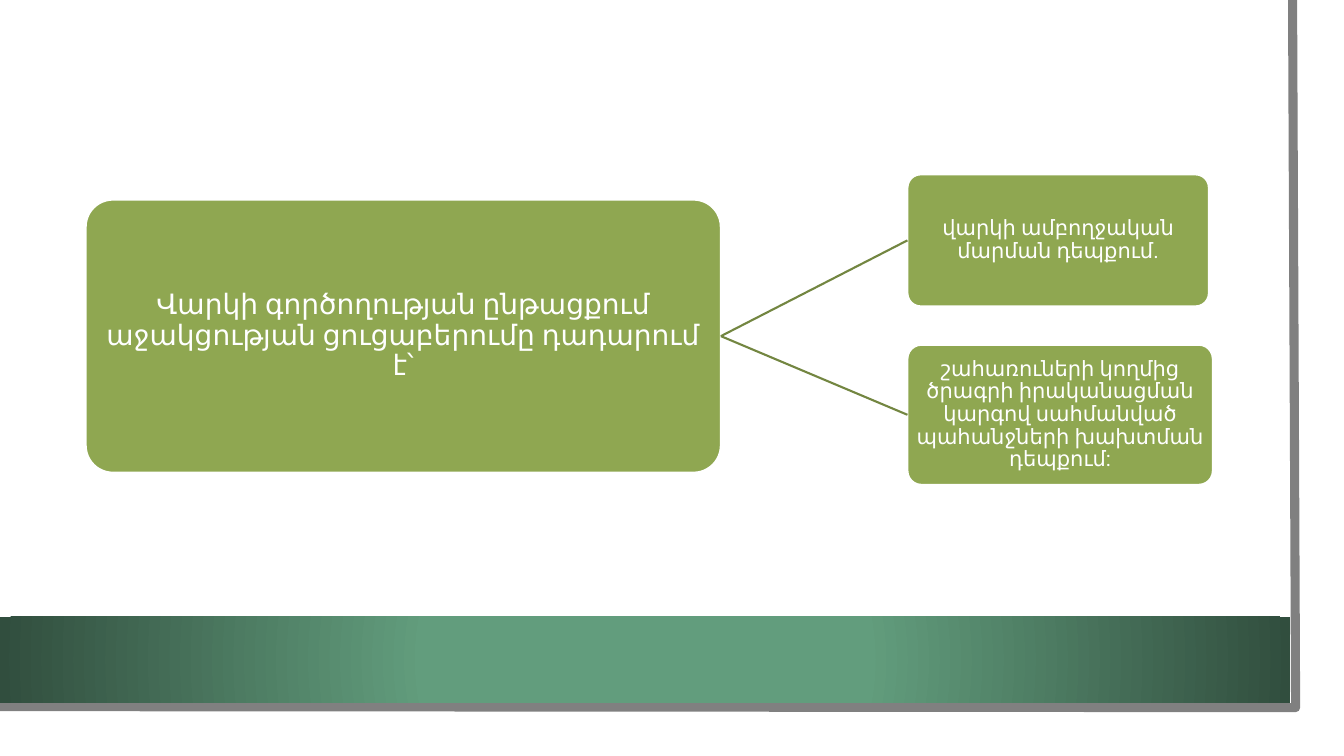
from lxml import etree
from pptx import Presentation
from pptx.dml.color import RGBColor
from pptx.enum.shapes import MSO_CONNECTOR, MSO_SHAPE
from pptx.enum.text import MSO_ANCHOR, PP_ALIGN
from pptx.oxml.ns import qn
from pptx.util import Inches, Pt

WHITE = RGBColor(0xFF, 0xFF, 0xFF)
GRAY = RGBColor(0x80, 0x80, 0x80)
OLIVE = RGBColor(0x8F, 0xA7, 0x51)
DARK_OLIVE = RGBColor(0x73, 0x86, 0x41)
GREEN = RGBColor(0x62, 0x9D, 0x7D)
DARK_GREEN = RGBColor(0x31, 0x4E, 0x3E)

RIGHT_SIDE, LEFT_SIDE = 3, 1


def set_all(target, values):
    for name, value in values.items():
        setattr(target, name, value)


class SlideBuilder:
    FONT = {"name": "Roboto"}
    FRAME = {"word_wrap": True, "vertical_anchor": MSO_ANCHOR.MIDDLE,
             **{f"margin_{side}": Inches(0.01)
                for side in ("left", "top", "right", "bottom")}}
    PARAGRAPH = {"alignment": PP_ALIGN.CENTER, "line_spacing": 0.9}

    def __init__(self, slide):
        self.shapes = slide.shapes

    def shape(self, kind, bounds):
        shape = self.shapes.add_shape(kind, *map(Inches, bounds))
        shape.shadow.inherit = False
        shape.line.fill.background()
        return shape

    def panel(self, bounds, color):
        panel = self.shape(MSO_SHAPE.RECTANGLE, bounds)
        panel.fill.solid()
        panel.fill.fore_color.rgb = color

    def radial_band(self, bounds, stops):
        """Add a rectangle whose gradient runs outward from its centre."""
        fill = self.shape(MSO_SHAPE.RECTANGLE, bounds).fill
        fill.gradient()
        for stop, (position, color) in zip(fill.gradient_stops, stops):
            stop.position = position
            stop.color.rgb = color
        gradient = self.shapes[-1].element.spPr.find(qn("a:gradFill"))
        gradient.remove(gradient.find(qn("a:lin")))
        circle = etree.SubElement(gradient, qn("a:path"), {"path": "circle"})
        etree.SubElement(circle, qn("a:fillToRect"),
                         dict.fromkeys("ltrb", "50000"))

    def open_outline(self, points, color, width):
        start, *rest = [tuple(map(Inches, point)) for point in points]
        builder = self.shapes.build_freeform(*start)
        builder.add_line_segments(rest, close=False)
        outline = builder.convert_to_shape()
        outline.shadow.inherit = False
        outline.fill.background()
        set_all(outline.line, {"width": Pt(width)})
        outline.line.color.rgb = color

    def box(self, bounds, text, size):
        box = self.shape(MSO_SHAPE.ROUNDED_RECTANGLE, bounds)
        box.adjustments[0] = 0.1
        box.fill.solid()
        box.fill.fore_color.rgb = OLIVE
        box.line.color.rgb = WHITE
        box.line.width = Pt(1.5)
        set_all(box.text_frame, self.FRAME)
        paragraph = box.text_frame.paragraphs[0]
        set_all(paragraph, self.PARAGRAPH)
        run = paragraph.add_run()
        run.text = text
        set_all(run.font, {**self.FONT, "size": Pt(size)})
        run.font.color.rgb = WHITE
        return box

    def branch(self, parent, child):
        branch = self.shapes.add_connector(MSO_CONNECTOR.STRAIGHT, 0, 0, 0, 0)
        branch.begin_connect(parent, RIGHT_SIDE)
        branch.end_connect(child, LEFT_SIDE)
        branch.line.color.rgb = DARK_OLIVE
        branch.line.width = Pt(1.5)
        etree.SubElement(branch.element.spPr, qn("a:effectLst"))


def main():
    presentation = Presentation()
    set_all(presentation, {"slide_width": Inches(13.33),
                           "slide_height": Inches(7.5)})
    blank_layout = presentation.slide_layouts[6]
    builder = SlideBuilder(presentation.slides.add_slide(blank_layout))

    builder.panel((0, 0, 13.1, 7.27), WHITE)
    builder.open_outline([(12.82, 0), (12.85, 7.02), (-0.03, 7.01)], GRAY, 6.5)
    builder.radial_band((0, 6.12, 12.8, 0.85),
                        [(0.34, GREEN), (1, DARK_GREEN)])

    termination = builder.box(
        (0.85, 1.98, 6.3, 2.71),
        "Վարկի գործողության ընթացքում աջակցության ցուցաբերումը դադարում է՝", 20)
    cases = [
        ((9, 1.73, 2.99, 1.31), "վարկի ամբողջական մարման դեպքում."),
        ((9, 3.42, 3.03, 1.39),
         "շահառուների կողմից ծրագրի իրականացման կարգով սահմանված "
         "պահանջների խախտման դեպքում:"),
    ]
    for bounds, condition in cases:
        builder.branch(termination, builder.box(bounds, condition, 15))

    presentation.save("out.pptx")


if __name__ == "__main__":
    main()
